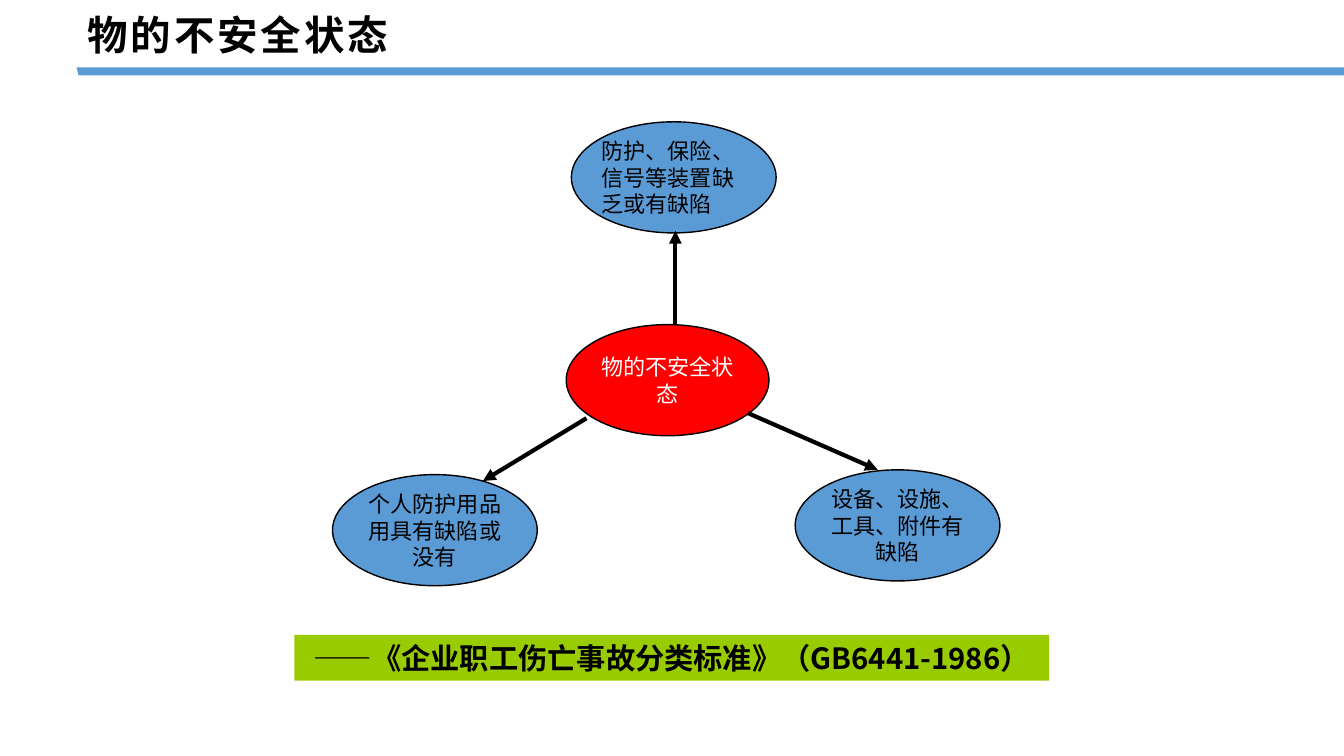
from lxml import etree
from pptx import Presentation
from pptx.dml.color import RGBColor
from pptx.enum import shapes, text
from pptx.oxml.ns import qn
from pptx.util import Cm, Pt

BLUE = RGBColor(0x5B, 0x9B, 0xD5)
RED = RGBColor(0xFF, 0x00, 0x00)
GREEN = RGBColor(0x99, 0xCC, 0x00)
BLACK = RGBColor(0x00, 0x00, 0x00)
WHITE = RGBColor(0xFF, 0xFF, 0xFF)
CJK = "Noto Sans CJK SC"
CENTER, LEFT = text.PP_ALIGN.CENTER, text.PP_ALIGN.LEFT


def write(sp, content, color, align, margins, wrap=True, **font):
    tf = sp.text_frame
    frame = {"word_wrap": wrap, "auto_size": text.MSO_AUTO_SIZE.NONE,
             "vertical_anchor": text.MSO_ANCHOR.MIDDLE,
             "margin_left": margins[0], "margin_right": margins[0],
             "margin_top": margins[1], "margin_bottom": margins[1]}
    for key, value in frame.items():
        setattr(tf, key, value)
    p = tf.paragraphs[0]
    p.alignment = align
    r = p.add_run()
    r.text = content
    for key, value in font.items():
        setattr(r.font, key, value)
    r.font.color.rgb = color
    etree.SubElement(r.font._element, qn("a:ea"), typeface=CJK)
    return r


def add_box(kind, x, y, w, h, fill):
    sp = s.shapes.add_shape(kind, Cm(x), Cm(y), Cm(w), Cm(h))
    sp.shadow.inherit = False
    sp.fill.solid()
    sp.fill.fore_color.rgb = fill
    return sp


prs = Presentation()
prs.slide_width, prs.slide_height = Cm(33.87), Cm(19.05)
s = prs.slides.add_slide(prs.slide_layouts[5])

# Rule under the title
fb = s.shapes.build_freeform(Cm(1.93), Cm(1.7))
fb.add_line_segments([(Cm(33.87), Cm(1.7)), (Cm(33.87), Cm(1.9)), (Cm(1.98), Cm(1.9))])
rule = fb.convert_to_shape()
rule.shadow.inherit = False
rule.fill.solid()
rule.fill.fore_color.rgb = BLUE
rule.line.fill.background()

# Title
title = s.shapes.title
title.left, title.top, title.width, title.height = Cm(2.03), Cm(0.15), Cm(15.85), Cm(1.45)
r = write(title, "物的不安全状态", BLACK, LEFT, (Cm(0.18), Cm(0.08)),
          name="Arial", size=Pt(28.9), bold=True)
r.font._element.set("spc", "200")

# Central state and its three kinds
ovals = [
    ("物的不安全状态", 14.27, 8.18, 5.11, RED, WHITE, CENTER),
    ("设备、设施、工具、附件有缺陷", 20.04, 11.84, 5.16, BLUE, BLACK, CENTER),
    ("防护、保险、信号等装置缺乏或有缺陷", 14.4, 3.07, 5.16, BLUE, BLACK, LEFT),
    ("个人防护用品用具有缺陷或没有", 8.38, 11.96, 5.16, BLUE, BLACK, CENTER),
]
for label, x, y, w, fill, color, align in ovals:
    sp = add_box(shapes.MSO_SHAPE.OVAL, x, y, w, 2.8, fill)
    sp.line.color.rgb = BLACK
    sp.line.width = Pt(1)
    write(sp, label, color, align, (0, 0), name=CJK, size=Pt(15.8))

# Arrows from the centre outwards
for x1, y1, x2, y2 in [(17.02, 8.18, 17.02, 5.82),
                       (14.78, 10.54, 12.17, 12.12),
                       (18.85, 10.41, 22.12, 11.84)]:
    c = s.shapes.add_connector(shapes.MSO_CONNECTOR.STRAIGHT, Cm(x1), Cm(y1), Cm(x2), Cm(y2))
    c.line.color.rgb = BLACK
    c.line.width = Pt(3)
    etree.SubElement(c.line._get_or_add_ln(), qn("a:tailEnd"), type="triangle")
    etree.SubElement(c._element.spPr, qn("a:effectLst"))

# Source of the classification
banner = add_box(shapes.MSO_SHAPE.RECTANGLE, 7.42, 16, 19.02, 1.15, GREEN)
banner.line.fill.background()
write(banner, "——《企业职工伤亡事故分类标准》（GB6441-1986）", BLACK, CENTER,
      (Cm(0.25), Cm(0.13)), wrap=False, name=CJK, size=Pt(20.9), bold=True)

prs.save("out.pptx")
